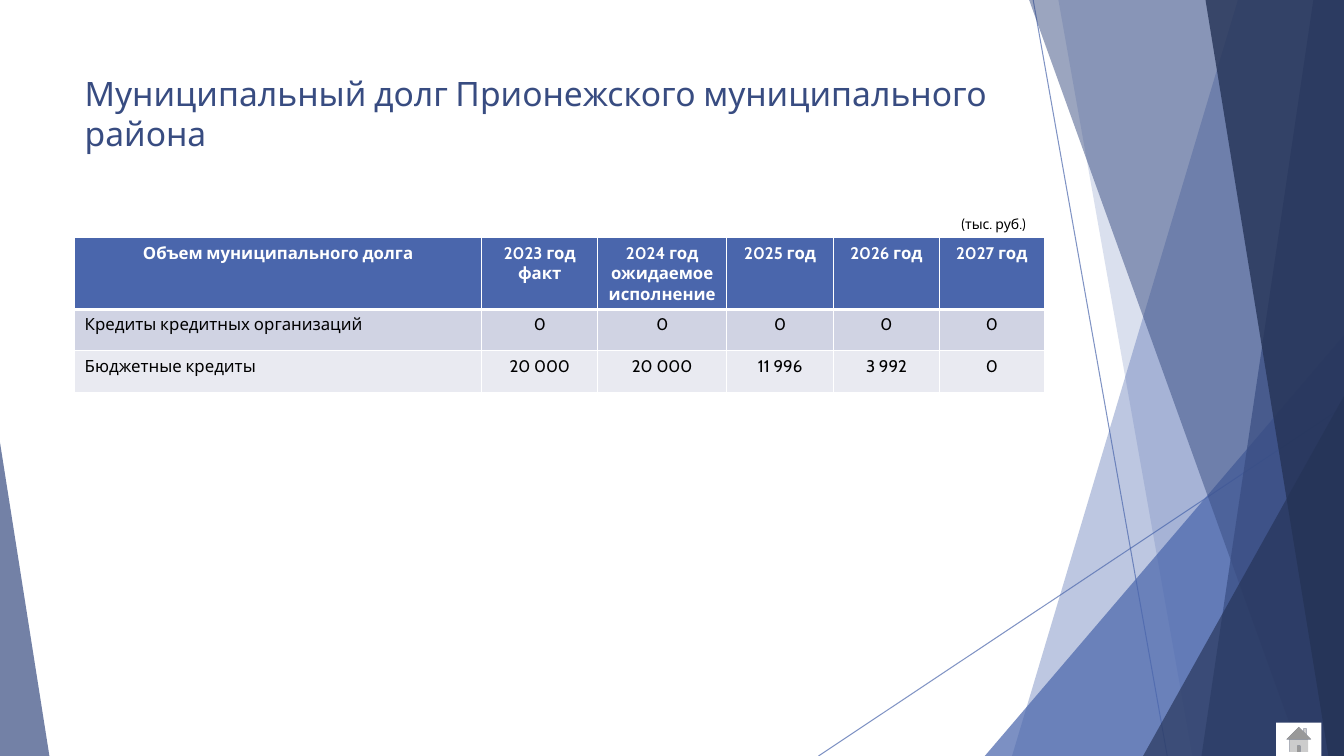
from dataclasses import dataclass

from lxml.etree import SubElement
from pptx import Presentation
from pptx.dml.color import RGBColor
from pptx.enum.shapes import MSO_CONNECTOR, MSO_SHAPE
from pptx.enum.text import MSO_ANCHOR, PP_ALIGN
from pptx.oxml.ns import qn
from pptx.util import Pt


@dataclass(frozen=True)
class Theme:
    font: str = "Cabin"
    blue: str = "4A66AC"
    dark: str = "384C81"
    navy: str = "253356"
    white: str = "FFFFFF"
    black: str = "000000"
    bands: tuple = ("D0D3E3", "E9EAF1")
    title_size: int = 24
    table_size: int = 12
    unit_size: int = 10


THEME = Theme()
WIDTH, HEIGHT = 960, 540
LEFT = 53.28

COLUMN_WIDTHS = (290.88, 82.8, 92.16, 76.32, 75.6, 74.88)
ROW_HEIGHTS = (49.68, 29.52, 29.52)
DEBT_ROWS = (
    ("Объем муниципального долга", "2023 год\vфакт", "2024 год\vожидаемое исполнение",
     "2025 год", "2026 год", "2027 год"),
    ("Кредиты кредитных организаций", "0", "0", "0", "0", "0"),
    ("Бюджетные кредиты", "20 000", "20 000", "11 996", "3 992", "0"),
)


def set_opacity(shape, percent):
    for colour in shape.element.iter(qn("a:srgbClr")):
        SubElement(colour, qn("a:alpha"), val=str(percent * 1000))


def paint(shape, colour, opacity=100):
    shape.shadow.inherit = False
    shape.fill.solid()
    shape.fill.fore_color.rgb = RGBColor.from_string(colour)
    shape.line.fill.background()
    if opacity < 100:
        set_opacity(shape, opacity)


def add_thin_line(page, start, end):
    line = page.shapes.add_connector(
        MSO_CONNECTOR.STRAIGHT, *(Pt(value) for value in start + end))
    line.line.width = Pt(0.75)
    line.line.color.rgb = RGBColor.from_string(THEME.blue)
    SubElement(line.element.spPr, qn("a:effectLst"))
    set_opacity(line, 70)


def add_ribbon(page, top, bottom, colour, opacity):
    """Fill from a slanted left edge to the right side of the slide."""
    builder = page.shapes.build_freeform(Pt(top), 0)
    corners = ((WIDTH, 0), (WIDTH, HEIGHT), (bottom, HEIGHT))
    builder.add_line_segments([(Pt(x), Pt(y)) for x, y in corners], close=True)
    paint(builder.convert_to_shape(), colour, opacity)


def add_corner(page, left, top, width, apex, colour, opacity):
    """Add a triangle that stands on the bottom edge of the slide."""
    corner = page.shapes.add_shape(MSO_SHAPE.ISOSCELES_TRIANGLE, Pt(left), Pt(top),
                                   Pt(width), Pt(HEIGHT - top))
    corner.adjustments[0] = apex
    paint(corner, colour, opacity)


def add_backdrop(page):
    add_thin_line(page, (738, 0), (833.76, HEIGHT))
    add_thin_line(page, (WIDTH, 290.16), (584.64, HEIGHT))
    add_ribbon(page, 884.16, 722.88, THEME.blue, 36)
    add_ribbon(page, 756, 851.76, THEME.blue, 20)
    add_corner(page, 703.44, 239.76, 256.56, 1, THEME.blue, 72)
    add_ribbon(page, 735.12, 929.52, THEME.dark, 50)
    add_ribbon(page, 938.16, 858.24, THEME.dark, 70)
    add_ribbon(page, 861.12, 948.96, THEME.navy, 80)
    add_corner(page, 816.48, 282.96, 143.52, 1, THEME.navy, 66)
    add_corner(page, 0, 316.08, 35.28, 0, THEME.dark, 70)


def write(frame, text, size, colour, bold=False, align=PP_ALIGN.LEFT):
    frame.text = text
    para = frame.paragraphs[0]
    para.alignment = align
    look = {"name": THEME.font, "size": Pt(size), "bold": bold}
    for span in para.runs:
        for name, value in look.items():
            setattr(span.font, name, value)
        span.font.color.rgb = RGBColor.from_string(colour)


def set_title(page, text):
    title = page.shapes.title
    place = {"left": LEFT, "top": 48.24, "width": 706.32, "height": 67.68}
    for name, value in place.items():
        setattr(title, name, Pt(value))
    title.text_frame.vertical_anchor = MSO_ANCHOR.TOP
    write(title.text_frame, text, THEME.title_size, THEME.dark)
    page.shapes.element.append(title.element)


def add_borders(cell, top, bottom):
    properties = cell._tc.get_or_add_tcPr()
    for side, width in {"L": 1, "R": 1, "T": top, "B": bottom}.items():
        border = SubElement(properties, qn(f"a:ln{side}"), w=str(Pt(width)))
        fill = SubElement(border, qn("a:solidFill"))
        SubElement(fill, qn("a:srgbClr"), val=THEME.white)


def add_debt_table(page):
    table = page.shapes.add_table(
        len(DEBT_ROWS), len(COLUMN_WIDTHS), Pt(LEFT), Pt(169.92),
        Pt(sum(COLUMN_WIDTHS)), Pt(sum(ROW_HEIGHTS))).table
    for column, width in zip(table.columns, COLUMN_WIDTHS):
        column.width = Pt(width)
    fills = (THEME.blue,) + THEME.bands
    for i, (row, height, texts) in enumerate(zip(table.rows, ROW_HEIGHTS, DEBT_ROWS)):
        row.height = Pt(height)
        header = i == 0
        for j, (cell, text) in enumerate(zip(row.cells, texts)):
            add_borders(cell, top=3 if i == 1 else 1, bottom=3 if header else 1)
            cell.fill.solid()
            cell.fill.fore_color.rgb = RGBColor.from_string(fills[i])
            write(cell.text_frame, text, THEME.table_size,
                  THEME.white if header else THEME.black, header,
                  PP_ALIGN.CENTER if header or j else PP_ALIGN.LEFT)


def add_home_button(page):
    button = page.shapes.add_shape(MSO_SHAPE.ACTION_BUTTON_HOME, Pt(911.52), Pt(516.24),
                                   Pt(32.4), Pt(23.76))
    paint(button, THEME.white)


def add_unit_label(page, text):
    box = page.shapes.add_textbox(Pt(679.68), Pt(150.48), Pt(66.24), Pt(19.44))
    box.text_frame.word_wrap = True
    write(box.text_frame, text, THEME.unit_size, THEME.black)


def main():
    deck = Presentation()
    deck.slide_width, deck.slide_height = Pt(WIDTH), Pt(HEIGHT)
    page = deck.slides.add_slide(deck.slide_layouts.get_by_name("Title Only"))
    add_backdrop(page)
    set_title(page, "Муниципальный долг Прионежского муниципального района")
    add_debt_table(page)
    add_home_button(page)
    add_unit_label(page, "(тыс. руб.)")
    deck.save("out.pptx")


if __name__ == "__main__":
    main()
